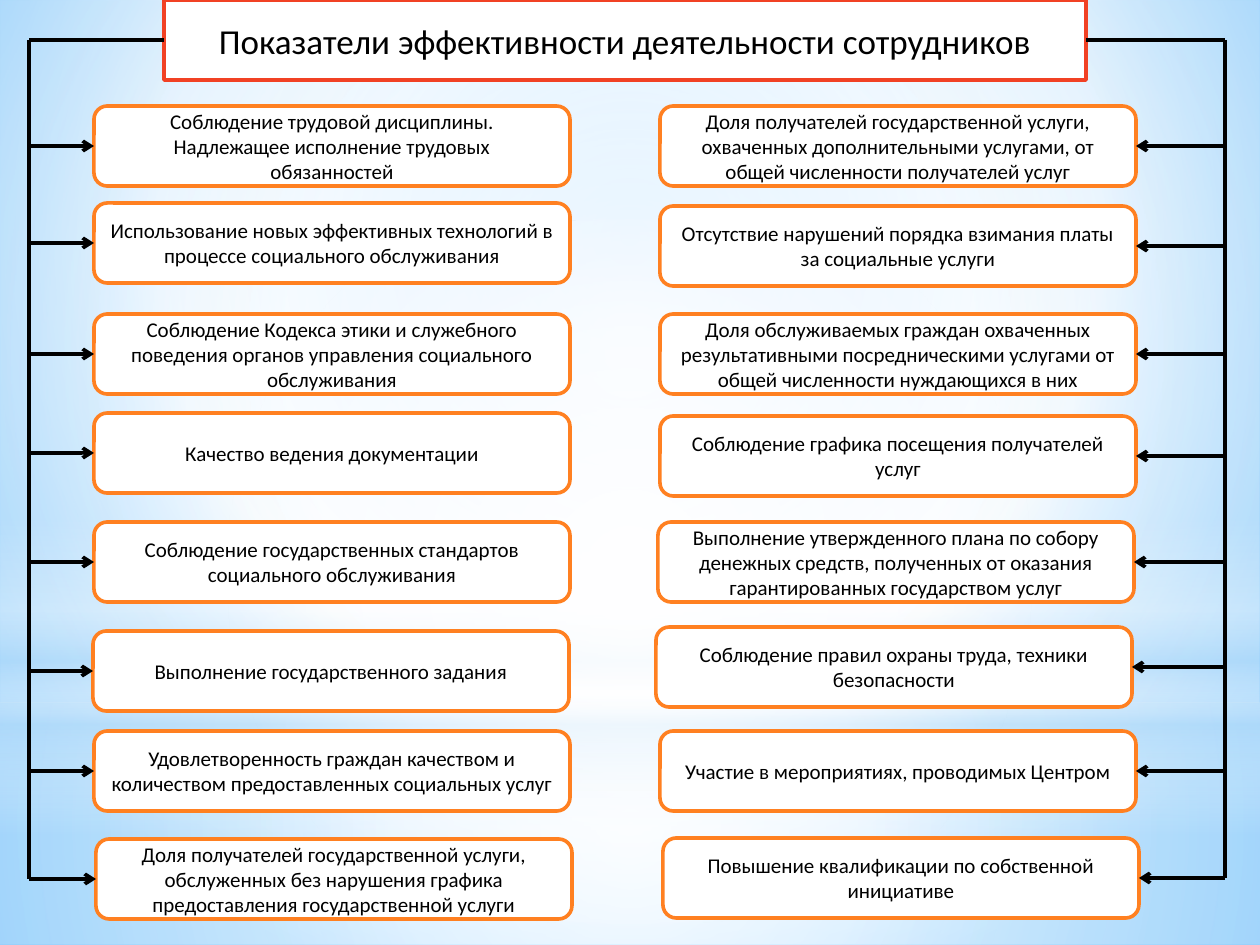
from lxml import etree
from pptx import Presentation
from pptx import util as u
from pptx.dml.color import RGBColor
from pptx.enum import shapes, text
from pptx.oxml.ns import qn

PX = 914400 / 126
W, H = 1260, 945
LINE = u.Pt(2.08)
FONT = "Calibri"
COLORS = {"white": "FFFFFF", "black": "000000", "red": "F14124", "orange": "FF8021",
          "sky": "9ED5FF", "azure": "5BB9FF", "pale": "B4DCFA"}
BOX_W, BOX_H = 476, 80
CENTER = (50, 50, 50, 50)

# Each indicator: left, top, wording
LEFT = [
    (94, 106, "Соблюдение трудовой дисциплины. Надлежащее исполнение трудовых обязанностей"),
    (94, 203, "Использование новых эффективных технологий в процессе социального обслуживания"),
    (94, 314, "Соблюдение Кодекса этики и служебного поведения органов управления социального обслуживания"),
    (94, 413, "Качество ведения документации"),
    (94, 522, "Соблюдение государственных стандартов социального обслуживания"),
    (93, 631, "Выполнение государственного задания"),
    (94, 731, "Удовлетворенность граждан качеством и количеством предоставленных социальных услуг"),
    (96, 839, "Доля получателей государственной услуги, обслуженных без нарушения графика "
              "предоставления государственной услуги"),
]
RIGHT = [
    (660, 106, "Доля получателей государственной услуги, охваченных дополнительными услугами, "
               "от общей численности получателей услуг"),
    (660, 206, "Отсутствие нарушений порядка взимания платы за социальные услуги"),
    (660, 314, "Доля обслуживаемых граждан охваченных результативными посредническими услугами "
               "от общей численности нуждающихся в них"),
    (660, 416, "Соблюдение графика посещения получателей услуг"),
    (658, 522, "Выполнение утвержденного плана по собору денежных средств, полученных от оказания "
               "гарантированных государством услуг"),
    (656, 627, "Соблюдение правил охраны труда, техники безопасности"),
    (660, 731, "Участие в мероприятиях, проводимых Центром"),
    (663, 838, "Повышение квалификации по собственной инициативе"),
]


def px(n):
    return u.Emu(round(n * PX))


def rgb(name):
    return RGBColor.from_string(COLORS[name])


def set_gradient(fill, owner, stops, focus=None):
    """Give a fill (position, colour, opacity) stops: circular to focus, else top to bottom."""
    fill.gradient()
    grad = next(owner.iter(qn("a:gradFill")))
    for child in list(grad):
        grad.remove(child)
    stop_list = etree.SubElement(grad, qn("a:gsLst"))
    for pos, color, opacity in stops:
        stop = etree.SubElement(stop_list, qn("a:gs"), pos=str(pos * 1000))
        clr = etree.SubElement(stop, qn("a:srgbClr"), val=COLORS[color])
        if opacity < 100:
            etree.SubElement(clr, qn("a:alpha"), val=str(opacity * 1000))
    if focus:
        circle = etree.SubElement(grad, qn("a:path"))
        circle.set("path", "circle")
        sides = {side: str(v * 1000) for side, v in zip("ltrb", focus)}
        etree.SubElement(circle, qn("a:fillToRect"), **sides)
    else:
        etree.SubElement(grad, qn("a:lin"), ang="5400000", scaled="0")


def add_backdrop(slide):
    set_gradient(slide.background.fill, slide.element,
                 [(0, "sky", 100), (60, "white", 100), (100, "azure", 100)], (20, 10, 20, 60))
    rect, oval = shapes.MSO_SHAPE.RECTANGLE, shapes.MSO_SHAPE.OVAL
    layers = [
        (rect, 703, 242, [(0, "white", 91), (37, "white", 76), (100, "pale", 79)], CENTER),
        (rect, 0, 703, [(0, "white", 89), (48, "white", 62), (100, "pale", 79)], CENTER),
        (rect, 519, 315, [(0, "white", 0), (29, "white", 30), (45, "pale", 40),
                          (55, "white", 26), (65, "pale", 60), (100, "white", 0)], None),
        (oval, 220, 703, [(0, "white", 100), (56, "white", 0)], CENTER),
    ]
    for kind, top, height, stops, focus in layers:
        sp = slide.shapes.add_shape(kind, 0, px(top), px(W), px(height))
        sp.shadow.inherit = False
        sp.line.fill.background()
        set_gradient(sp.fill, sp.element, stops, focus)


def format_box(sp, wording, size, border):
    sp.fill.solid()
    sp.fill.fore_color.rgb = rgb("white")
    sp.line.color.rgb = rgb(border)
    sp.line.width = LINE
    tf = sp.text_frame
    tf.word_wrap = True
    tf.auto_size = text.MSO_AUTO_SIZE.NONE
    tf.vertical_anchor = text.MSO_ANCHOR.MIDDLE
    p = tf.paragraphs[0]
    p.alignment = text.PP_ALIGN.CENTER
    r = p.add_run()
    r.text = wording
    r.font.size = u.Pt(size)
    r.font.name = FONT
    r.font.color.rgb = rgb("black")


def add_title(slide, left, top, width, height):
    title = slide.shapes.title
    title.left, title.top, title.width, title.height = map(px, (left, top, width, height))
    geometry = etree.Element(qn("a:prstGeom"), prst="roundRect")
    etree.SubElement(geometry, qn("a:avLst"))
    title.element.spPr.find(qn("a:xfrm")).addnext(geometry)
    format_box(title, "Показатели эффективности деятельности сотрудников", 20, "red")
    slide.shapes._spTree.append(title.element)  # in front of the backdrop
    return title


def add_line(slide, x1, y1, x2, y2, arrow=False):
    line = slide.shapes.add_connector(shapes.MSO_CONNECTOR.STRAIGHT, *map(px, (x1, y1, x2, y2)))
    line.line.color.rgb = rgb("black")
    line.line.width = LINE
    if arrow:
        etree.SubElement(line.line._get_or_add_ln(), qn("a:tailEnd"), type="arrow")
    etree.SubElement(line.element.spPr, qn("a:effectLst"))
    return line


def add_column(slide, title, indicators, spine, site):
    """Hang indicators on a vertical spine; site is the side of the boxes that faces it."""
    top = 40
    bottom = indicators[-1][1] + BOX_H // 2
    add_line(slide, spine, top, spine, top).begin_connect(title, site)
    add_line(slide, spine, top, spine, bottom)
    for left, box_top, wording in indicators:
        sp = slide.shapes.add_shape(shapes.MSO_SHAPE.ROUNDED_RECTANGLE,
                                    *map(px, (left, box_top, BOX_W, BOX_H)))
        sp.shadow.inherit = False
        format_box(sp, wording, 12, "orange")
        middle = box_top + BOX_H // 2
        edge = left if site == 1 else left + BOX_W
        add_line(slide, spine, middle, edge, middle, arrow=True).end_connect(sp, site)


def main():
    prs = Presentation()
    prs.slide_width, prs.slide_height = px(W), px(H)
    slide = prs.slides.add_slide(prs.slide_layouts[5])
    add_backdrop(slide)
    title = add_title(slide, 164, 0, 922, 80)
    add_column(slide, title, LEFT, 29, 1)
    add_column(slide, title, RIGHT, 1225, 3)
    prs.save("out.pptx")


if __name__ == "__main__":
    main()
